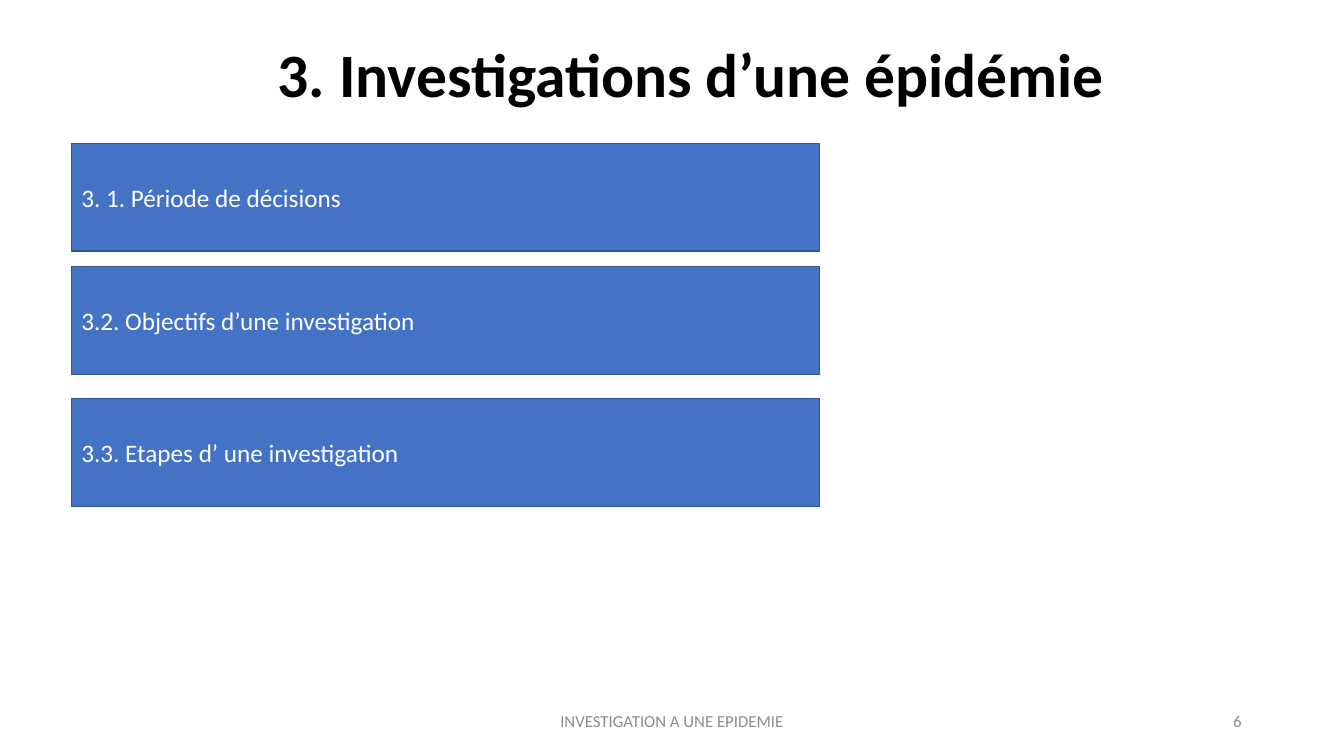
"""Build the section slide on investigating an epidemic."""
from pptx import Presentation
from pptx import util as u
from pptx.dml.color import RGBColor
from pptx.enum import shapes, text


def color(hex_code):
    """Return the colour for a hex string."""
    return RGBColor.from_string(hex_code)


def write(sp, content, size, hex_code, align, bold=False):
    """Set and format the single paragraph of a shape."""
    tf = sp.text_frame
    tf.text = content
    tf.word_wrap = True
    tf.vertical_anchor = text.MSO_ANCHOR.MIDDLE
    p = tf.paragraphs[0]
    p.alignment = align
    font = p.runs[0].font
    font.name, font.size, font.bold = "Calibri", u.Pt(size), bold
    font.color.rgb = color(hex_code)
    return p


def add_title(s, content, left, top, width, height):
    """Place and format the title placeholder."""
    sp = s.shapes.title
    sp.left, sp.top, sp.width, sp.height = map(u.Cm, (left, top, width, height))
    p = write(sp, content, 44, "000000", text.PP_ALIGN.CENTER, True)
    p.line_spacing = 0.9


def add_sections(s, sections, left, top, width, height):
    """Draw a bar for each section at its offset below the top."""
    for offset, content in sections:
        sp = s.shapes.add_shape(shapes.MSO_SHAPE.RECTANGLE, u.Cm(left),
                                u.Cm(top + offset), u.Cm(width), u.Cm(height))
        sp.shadow.inherit = False
        sp.fill.solid()
        sp.fill.fore_color.rgb = color("4472C4")
        sp.line.color.rgb = color("325491")
        sp.line.width = u.Pt(1)
        write(sp, content, 18, "FFFFFF", text.PP_ALIGN.LEFT)


def add_footer(s, content, number, left, top, width, height):
    """Place the footer text and, right-aligned, the slide number."""
    number_width = 7.62
    gap = 1.27
    footer_width = width - number_width - gap
    for x, w, label, align in (
        (left, footer_width, content, text.PP_ALIGN.CENTER),
        (left + footer_width + gap, number_width, number, text.PP_ALIGN.RIGHT),
    ):
        sp = s.shapes.add_textbox(u.Cm(x), u.Cm(top), u.Cm(w), u.Cm(height))
        write(sp, label, 12, "8C8C8C", align)


def main():
    """Build and save the presentation."""
    prs = Presentation()
    prs.slide_width, prs.slide_height = u.Cm(33.87), u.Cm(19.05)
    s = prs.slides.add_slide(prs.slide_layouts[5])
    add_title(s, "3. Investigations d’une épidémie", 5.87, 0.79, 23.11, 2.31)
    add_footer(s, "INVESTIGATION A UNE EPIDEMIE", "6", 11.22, 17.66, 20.32, 1.01)
    sections = (
        (0, "3. 1. Période de décisions"),
        (3.11, "3.2. Objectifs d’une investigation"),
        (6.44, "3.3. Etapes d’ une investigation"),
    )
    add_sections(s, sections, 1.8, 3.61, 18.85, 2.72)
    prs.save("out.pptx")


if __name__ == "__main__":
    main()
